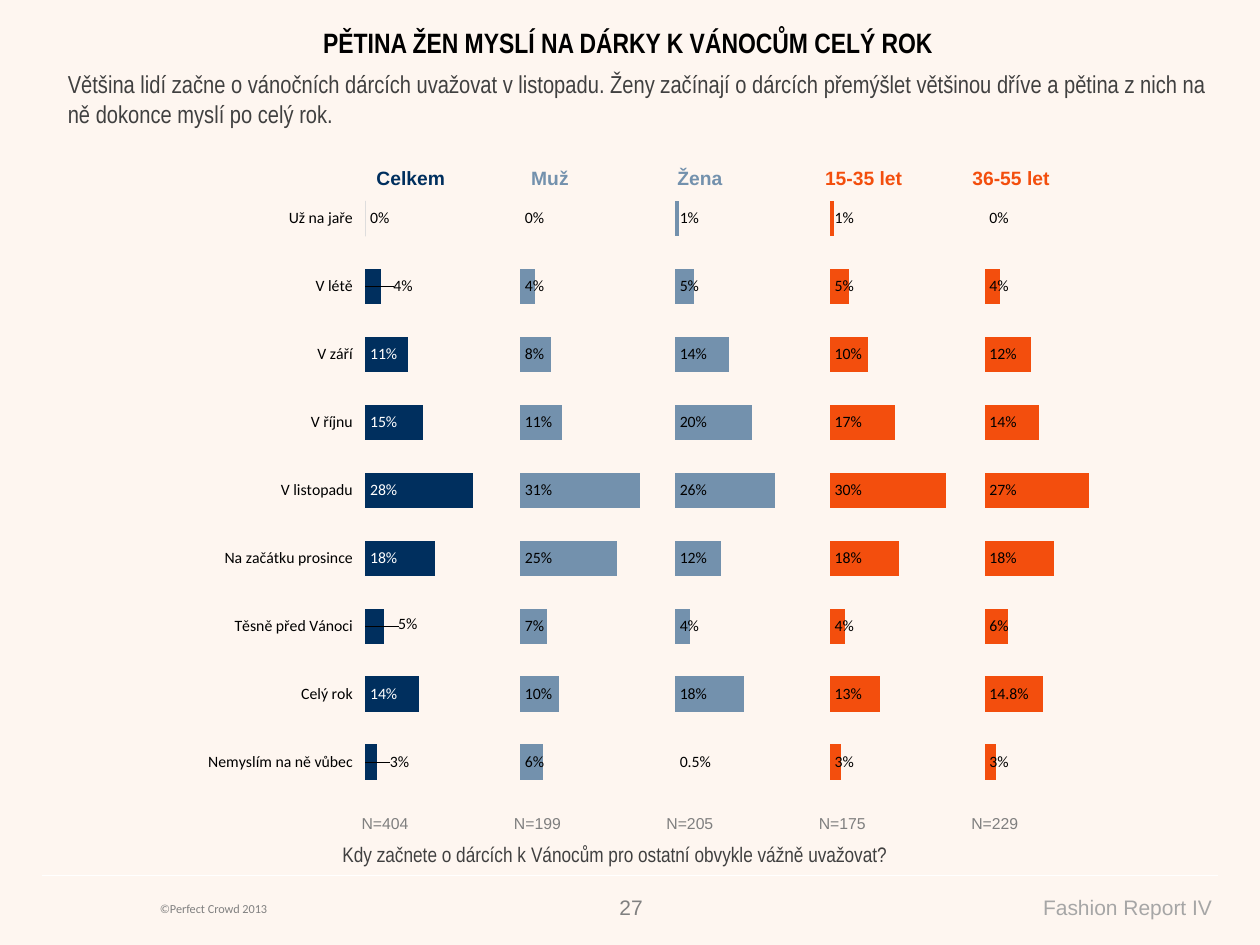
from lxml import etree
from pptx import Presentation
from pptx.chart.data import CategoryChartData
from pptx.dml.color import RGBColor
from pptx.enum import chart as ch, shapes, text
from pptx.oxml import parse_xml
from pptx.oxml.ns import nsdecls, qn
from pptx.util import Inches, Pt

HUE = {"back": "FEF6F0", "white": "FFFFFF", "black": "000000", "dark": "404040",
       "gray": "808080", "mid": "7F7F7F", "pale": "A6A6A6",
       "navy": "002F5E", "steel": "7391AD", "fire": "F34E0D"}
LEFT, MID, RIGHT = text.PP_ALIGN.LEFT, text.PP_ALIGN.CENTER, text.PP_ALIGN.RIGHT
PLAIN = "{2D5ABB26-0587-4C30-8999-92F81FD0307C}"
NOLEAD = (f'<c:extLst {nsdecls("c")}><c:ext uri="{{CE6537A1-D6FC-4f65-9D91-7224C49458BB}}" '
          'xmlns:c15="http://schemas.microsoft.com/office/drawing/2012/chart">'
          '<c15:showLeaderLines val="0"/></c:ext></c:extLst>')


def style(font, name, size, hue, bold=False):
    font.name, font.size, font.bold = name, Pt(size), bold
    font.color.rgb = RGBColor.from_string(HUE[hue])


def layout(**spots):
    tags = "".join(f'<c:{tag} val="{val}"/>' for tag, val in spots.items())
    return parse_xml(f'<c:layout {nsdecls("c")}><c:manualLayout>{tags}</c:manualLayout></c:layout>')


deck = Presentation()
deck.slide_width, deck.slide_height = Inches(10), Inches(7.5)
slide = deck.slides.add_slide(deck.slide_layouts[6])
slide.background.fill.solid()
slide.background.fill.fore_color.rgb = RGBColor.from_string(HUE["back"])

rule = slide.shapes.add_connector(shapes.MSO_CONNECTOR.STRAIGHT,
                                  Inches(0.33), Inches(6.95), Inches(9.67), Inches(6.95))
rule.line.color.rgb = RGBColor.from_string(HUE["white"])
rule.line.width = Pt(0.75)
etree.SubElement(rule._element.spPr, qn("a:effectLst"))

notes = [
    ("©Perfect Crowd 2013", (1.17, 7.1, 2.91, 0.22), "Calibri", 7, "gray", LEFT),
    ("Fashion Report IV", (6.01, 7.05, 3.71, 0.3), "Arial", 12, "pale", RIGHT),
    ("27", (4.79, 7.05, 0.41, 0.3), "Arial", 12, "gray", RIGHT),
    ("PĚTINA ŽEN MYSLÍ NA DÁRKY K VÁNOCŮM CELÝ ROK", (0.56, 0.15, 8.85, 0.37),
     "Arial Narrow", 16, "black", MID),
    ("Kdy začnete o dárcích k\u00a0Vánocům pro ostatní obvykle vážně uvažovat?",
     (0.35, 6.63, 9.06, 0.3), "Arial Narrow", 12, "dark", MID),
    ("Většina lidí začne o vánočních dárcích uvažovat v listopadu. Ženy začínají o dárcích "
     "přemýšlet většinou dříve a pětina z nich na ně dokonce myslí po celý rok.",
     (0.44, 0.5, 9.36, 0.89), "Arial Narrow", 14, "dark", LEFT),
]
for words, place, face, size, hue, align in notes:
    box = slide.shapes.add_textbox(*map(Inches, place))
    box.text_frame.word_wrap = True
    box.text_frame.text = words
    para = box.text_frame.paragraphs[0]
    para.alignment = align
    style(para.runs[0].font, face, size, hue, bold=size == 16)

groups = [("Celkem", "navy", 1.14, "N=404"), ("Muž", "steel", 1.07, "N=199"),
          ("Žena", "steel", 1.31, "N=205"), ("15-35 let", "fire", 1.29, "N=175"),
          ("36-55 let", "fire", 1.05, "N=229")]
grids = [
    (2.45, 6.43, 9, False, [(base, "mid", 1.21) for _, _, _, base in groups]),
    (2.69, 1.31, 11, True, [(name, hue, wide) for name, hue, wide, _ in groups]),
]
for left, top, size, bold, cells in grids:
    wide = sum(cell[2] for cell in cells)
    grid = slide.shapes.add_table(1, len(cells), Inches(left), Inches(top),
                                  Inches(wide), Inches(0.22)).table
    grid.first_row = grid.horz_banding = False
    grid._tbl.tblPr.find(qn("a:tableStyleId")).text = PLAIN
    for col, (words, hue, wide) in enumerate(cells):
        grid.columns[col].width = Inches(wide)
        cell = grid.cell(0, col)
        cell.fill.background()
        cell.margin_left = cell.margin_right = cell.margin_top = cell.margin_bottom = 0
        cell.vertical_anchor = text.MSO_ANCHOR.MIDDLE
        cell.text_frame.text = words
        para = cell.text_frame.paragraphs[0]
        para.alignment = MID
        style(para.runs[0].font, "Arial", size, hue, bold)

shares = [
    [0, 0.04, 0.11, 0.15, 0.28, 0.18, 0.05, 0.14, 0.03],
    [0, 0.04, 0.08, 0.11, 0.31, 0.25, 0.07, 0.1, 0.06],
    [0.01, 0.05, 0.14, 0.2, 0.26, 0.12, 0.04, 0.18, 0],
    [0.01, 0.05, 0.1, 0.17, 0.3, 0.18, 0.04, 0.13, 0.03],
    [0, 0.04, 0.12, 0.14, 0.27, 0.18, 0.06, 0.15, 0.03],
]
STEP = 0.4
data = CategoryChartData(number_format="0%")
data.categories = ["Už na jaře", "V létě", "V září", "V říjnu", "V listopadu",
                   "Na začátku prosince", "Těsně před Vánoci", "Celý rok",
                   "Nemyslím na ně vůbec"]
for col, vals in enumerate(shares):
    data.add_series(f"Series {2 * col + 1}", vals)
    if col < len(shares) - 1:
        data.add_series(f"Series {2 * col + 2}", [round(STEP - val, 2) for val in vals])

chart = slide.shapes.add_chart(ch.XL_CHART_TYPE.BAR_STACKED, Inches(-0.18), Inches(1.09),
                               Inches(9.27), Inches(5.46), data).chart
chart.has_legend = chart.has_title = False
style(chart.font, "Calibri", 9, "black")
area = chart._chartSpace.chart.plotArea
for old in area.findall(qn("c:layout")):
    area.remove(old)
area.insert(0, layout(layoutTarget="inner", xMode="edge", yMode="edge",
                      x=0.332, y=0.069, w=0.663, h=0.889))

cats, vals = chart.category_axis, chart.value_axis
cats.reverse_order = True
cats.format.line.fill.background()
vals.visible = vals.has_major_gridlines = False
vals.minimum_scale, vals.maximum_scale = 0, STEP * len(shares)

plot = chart.plots[0]
plot.gap_width, plot.overlap, plot.vary_by_categories = 91, 100, False
base = ch.XL_LABEL_POSITION.INSIDE_BASE
for num, bar in enumerate(plot.series):
    if num % 2:
        bar.format.fill.background()
        continue
    bar.format.fill.solid()
    bar.format.fill.fore_color.rgb = RGBColor.from_string(HUE[groups[num // 2][1]])
    tags = bar.data_labels
    tags.show_value = True
    tags.number_format, tags.number_format_is_linked = "0%", False
    tags.position = base
    style(tags.font, "Calibri", 9, "black")
    tags._element.append(parse_xml(NOLEAD))

moves = {1: (0.02, 0), 6: (0.024, -0.003), 8: (0.017, 0)}
first = plot.series[0]
for row in range(1, 9):
    tag = first.points[row].data_label
    style(tag.font, "Calibri", 9, "black" if row in moves else "white")
    tag.position = base
    node = first.data_labels._element.xpath(f'c:dLbl[c:idx/@val="{row}"]')[0]
    node.insert(1, parse_xml(f'<c:numFmt {nsdecls("c")} formatCode="0%" sourceLinked="0"/>'))
    if row in moves:
        node.insert(1, layout(x=moves[row][0], y=moves[row][1]))

for num, row, words in [(4, 8, "0.5%"), (8, 7, "14.8%")]:
    tag = plot.series[num].points[row].data_label
    tag.text_frame.text = words
    style(tag.text_frame.paragraphs[0].runs[0].font, "Calibri", 9, "black")
    tag.position = base

deck.save("out.pptx")
